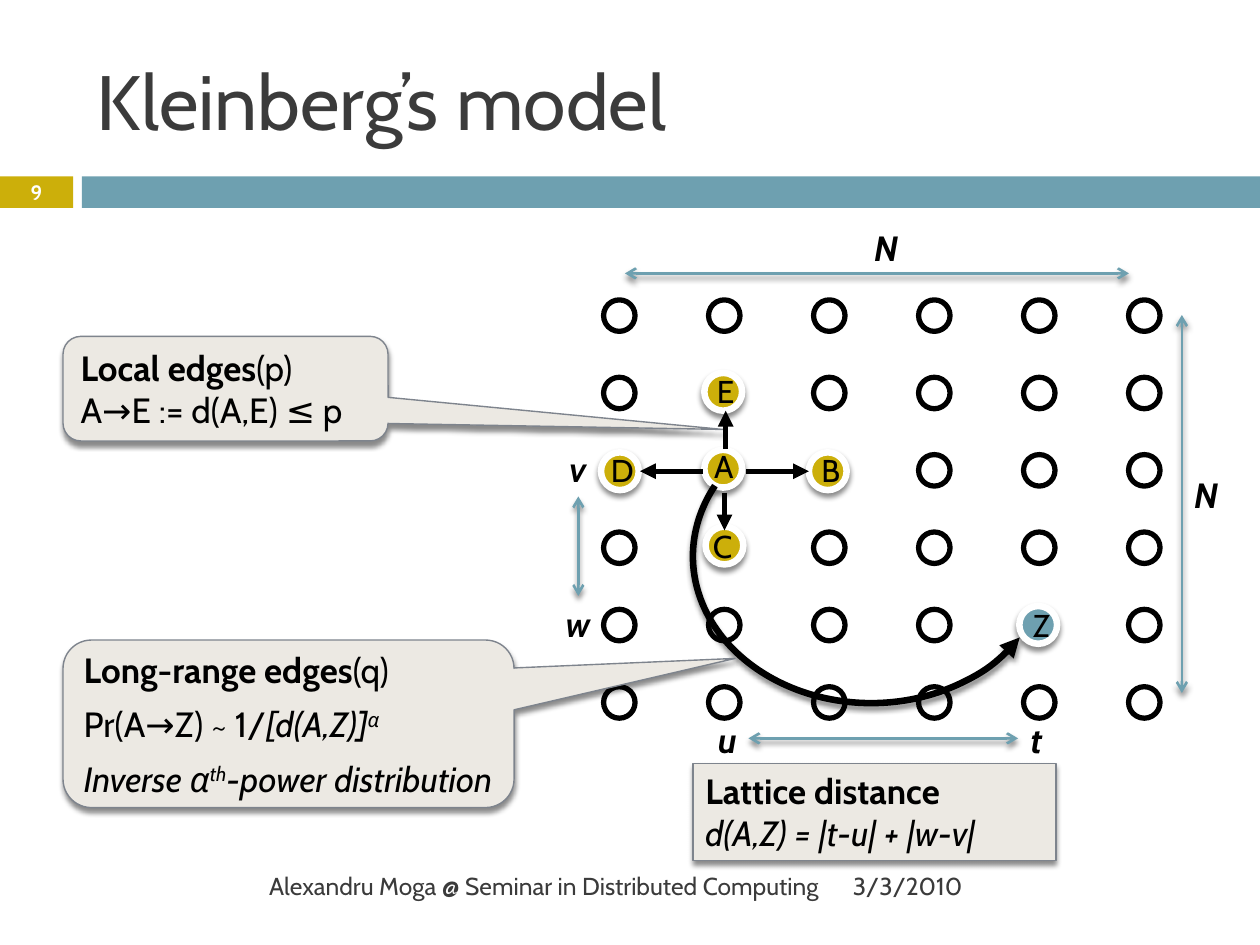
"""Build a slide on Kleinberg's lattice model with local and long-range edges."""
from lxml import etree
from pptx import Presentation
from pptx.dml.color import RGBColor
from pptx.enum.shapes import MSO_CONNECTOR, MSO_SHAPE
from pptx.enum.text import MSO_ANCHOR, MSO_AUTO_SIZE, PP_ALIGN
from pptx.oxml.ns import qn
from pptx.util import Inches, Pt

BLACK = RGBColor(0, 0, 0)
WHITE = RGBColor(255, 255, 255)
GRAY = RGBColor(0x3B, 0x3B, 0x3B)
GOLD = RGBColor(0xCC, 0xAF, 0x0A)
TEAL = RGBColor(0x6E, 0xA0, 0xB0)
SAND = RGBColor(0xEC, 0xE9, 0xE3)
SLATE = RGBColor(0x7E, 0x84, 0x8D)

RECT, OVAL, ARC = MSO_SHAPE.RECTANGLE, MSO_SHAPE.OVAL, MSO_SHAPE.ARC
CALLOUT = MSO_SHAPE.ROUNDED_RECTANGULAR_CALLOUT
STRAIGHT = MSO_CONNECTOR.STRAIGHT
TOP, MIDDLE = MSO_ANCHOR.TOP, MSO_ANCHOR.MIDDLE
LEFT, CENTER, RIGHT = PP_ALIGN.LEFT, PP_ALIGN.CENTER, PP_ALIGN.RIGHT
FIT_SHAPE, NO_FIT = MSO_AUTO_SIZE.SHAPE_TO_FIT_TEXT, MSO_AUTO_SIZE.NONE


class Painter:
    """Holds the font and the slide, and draws each kind of element."""

    def __init__(self, page, font):
        self.page = page
        self.font = font

    def effects(self, item, shadow):
        properties = item._element.spPr
        effect = properties.find(qn("a:effectLst"))
        if effect is None:
            effect = etree.SubElement(properties, qn("a:effectLst"))
        if shadow:
            outer = etree.SubElement(effect, qn("a:outerShdw"), blurRad=str(Pt(3)),
                                     dist=str(Pt(2.4)), dir="5400000", rotWithShape="0")
            color = etree.SubElement(outer, qn("a:srgbClr"), val="000000")
            etree.SubElement(color, qn("a:alpha"), val="45000")

    def arrowheads(self, item, head, tail):
        line = item.line._get_or_add_ln()
        for tag, kind in (("a:headEnd", head), ("a:tailEnd", tail)):
            if kind:
                etree.SubElement(line, qn(tag), type=kind)

    def shape(self, kind, at, fill=None, line=None, width=0, shadow=False, adjust=()):
        shape = self.page.shapes.add_shape(kind, *map(Inches, at))
        for index, value in enumerate(adjust):
            shape.adjustments[index] = value
        if fill is None:
            shape.fill.background()
        else:
            shape.fill.solid()
            shape.fill.fore_color.rgb = fill
        if line is None:
            shape.line.fill.background()
        else:
            shape.line.color.rgb = line
            shape.line.width = Pt(width)
        shape.shadow.inherit = False
        self.effects(shape, shadow)
        return shape

    def fill_text(self, box, paragraphs, size, color=BLACK, align=LEFT, anchor=TOP,
                  grow=False, hanging=False):
        """Fill a box; each run is its text and a set of style letters b, i and ^."""
        frame = box.text_frame
        frame.word_wrap = not grow
        frame.auto_size = FIT_SHAPE if grow else NO_FIT
        frame.vertical_anchor = anchor
        for index, runs in enumerate(paragraphs):
            para = frame.add_paragraph() if index else frame.paragraphs[0]
            para.alignment = align
            if hanging:
                para.space_before = Pt(7)
                indent = para._p.get_or_add_pPr()
                indent.set("marL", str(Inches(0.35)))
                indent.set("indent", str(-Inches(0.35)))
            for text, style in runs:
                span = para.add_run()
                span.text = text
                span.font.name = self.font
                span.font.size = Pt(size)
                span.font.color.rgb = color
                span.font.bold = "b" in style
                span.font.italic = "i" in style
                if "^" in style:
                    span.font._element.set("baseline", "30000")

    def text(self, at, words, size, style="", **options):
        box = self.page.shapes.add_textbox(*map(Inches, at))
        self.fill_text(box, [[(words, style)]], size, **options)

    def arrow(self, start, end, color, width, head, tail, shadow=False):
        arrow = self.page.shapes.add_connector(STRAIGHT, *map(Inches, start + end))
        arrow.line.color.rgb = color
        arrow.line.width = Pt(width)
        self.arrowheads(arrow, head, tail)
        self.effects(arrow, shadow)

    def span_arrow(self, start, end):
        self.arrow(start, end, TEAL, 1.5, "arrow", "arrow", True)

    def node(self, letter, circle, label, fill=GOLD):
        left, top, width = label
        self.shape(OVAL, circle + (0.3, 0.3), fill, WHITE, 3.75, True)
        self.text((left, top, width, 0.4), letter, 18, grow=True)

    def curve(self, at, angles):
        arc = self.shape(ARC, at, None, BLACK, 3.75, True, angles)
        arc.rotation = 180
        arc._element.spPr.find(qn("a:xfrm")).set("flipH", "1")
        self.arrowheads(arc, None, "triangle")

    def panel(self, kind, at, paragraphs, adjust=(), **options):
        box = self.shape(kind, at, SAND, SLATE, 0.79, True, adjust)
        self.fill_text(box, paragraphs, 20, **options)


def main():
    deck = Presentation()
    deck.slide_width, deck.slide_height = Inches(10), Inches(7.5)
    painter = Painter(deck.slides.add_slide(deck.slide_layouts[6]), "Cabin")

    painter.shape(RECT, (0, 1.4, 0.58, 0.25), GOLD)
    painter.shape(RECT, (0.65, 1.4, 9.35, 0.25), TEAL)
    for row in range(6):
        for column in range(6):
            painter.shape(OVAL, (4.79 + column * 5 / 6, 2.38 + row * 3.07 / 5, 0.25, 0.25),
                          WHITE, BLACK, 3)

    painter.text((0.67, 0.25, 8.92, 1.08), "Kleinberg’s model", 44, color=GRAY, anchor=MIDDLE)
    painter.text((0, 1.39, 0.58, 0.27), "9", 11.9, "b", color=WHITE, align=CENTER, anchor=MIDDLE)
    painter.text((0.67, 6.83, 5.93, 0.4), "Alexandru Moga @ Seminar in Distributed Computing",
                 14, color=GRAY, align=RIGHT, anchor=MIDDLE)
    painter.text((6.67, 6.83, 2.92, 0.4), "3/3/2010", 14, color=GRAY, anchor=MIDDLE)
    for label, left, top, width in (
            ("u", 5.6, 5.65, 0.34), ("v", 4.42, 3.5, 0.34), ("t", 8.08, 5.65, 0.28),
            ("w", 4.39, 4.73, 0.41), ("N", 6.84, 1.75, 0.46), ("N", 9.38, 3.71, 0.46)):
        painter.text((left, top, width, 0.44), label, 20, "bi", grow=True)

    painter.span_arrow((9.38, 2.5), (9.38, 5.5))
    painter.span_arrow((4.96, 2.17), (8.96, 2.17))

    painter.node("A", (5.59, 3.57), (5.57, 3.5, 0.35))
    painter.node("Z", (8.09, 4.81), (8.1, 4.76, 0.33), TEAL)
    painter.curve((5.5, 3.25, 2.83, 2.33), (93.4, 198.82))
    painter.node("B", (6.42, 3.59), (6.42, 3.53, 0.33))
    painter.node("C", (5.6, 4.18), (5.56, 4.13, 0.35))
    painter.node("D", (4.77, 3.59), (4.75, 3.53, 0.37))
    painter.node("E", (5.59, 2.96), (5.59, 2.9, 0.31))

    painter.panel(RECT, (5.5, 6.06, 2.88, 0.77), [
        [("Lattice distance", "b")],
        [("d(A,Z) = |t-u| + |w-v|", "i")]], grow=True)
    painter.panel(CALLOUT, (0.5, 5.08, 3.58, 1.33), [
        [("Long-range edges", "b"), ("(q)", "")],
        [("Pr(A→Z) ~ 1/", ""), ("[d(A,Z)]", "i"), ("α", "i^")],
        [("Inverse α", "i"), ("th", "i^"), ("-power distribution", "i")]],
        (0.99, -0.39, 0.17), anchor=MIDDLE, hanging=True)
    painter.panel(CALLOUT, (0.5, 2.67, 2.58, 0.83), [
        [("Local edges", "b"), ("(p)", "")],
        [("A→E := d(A,E) ≤ p", "")]], (1.53, 0.39, 0.17), anchor=MIDDLE)

    for start, end in (((5.92, 3.74), (6.42, 3.74)), ((5.58, 3.74), (5.08, 3.74)),
                       ((5.75, 3.91), (5.75, 4.21)), ((5.76, 3.56), (5.76, 3.26))):
        painter.arrow(start, end, BLACK, 3, None, "triangle")
    painter.span_arrow((5.94, 5.86), (8.08, 5.86))
    painter.span_arrow((4.59, 4.73), (4.59, 3.94))

    deck.save("out.pptx")


if __name__ == "__main__":
    main()
